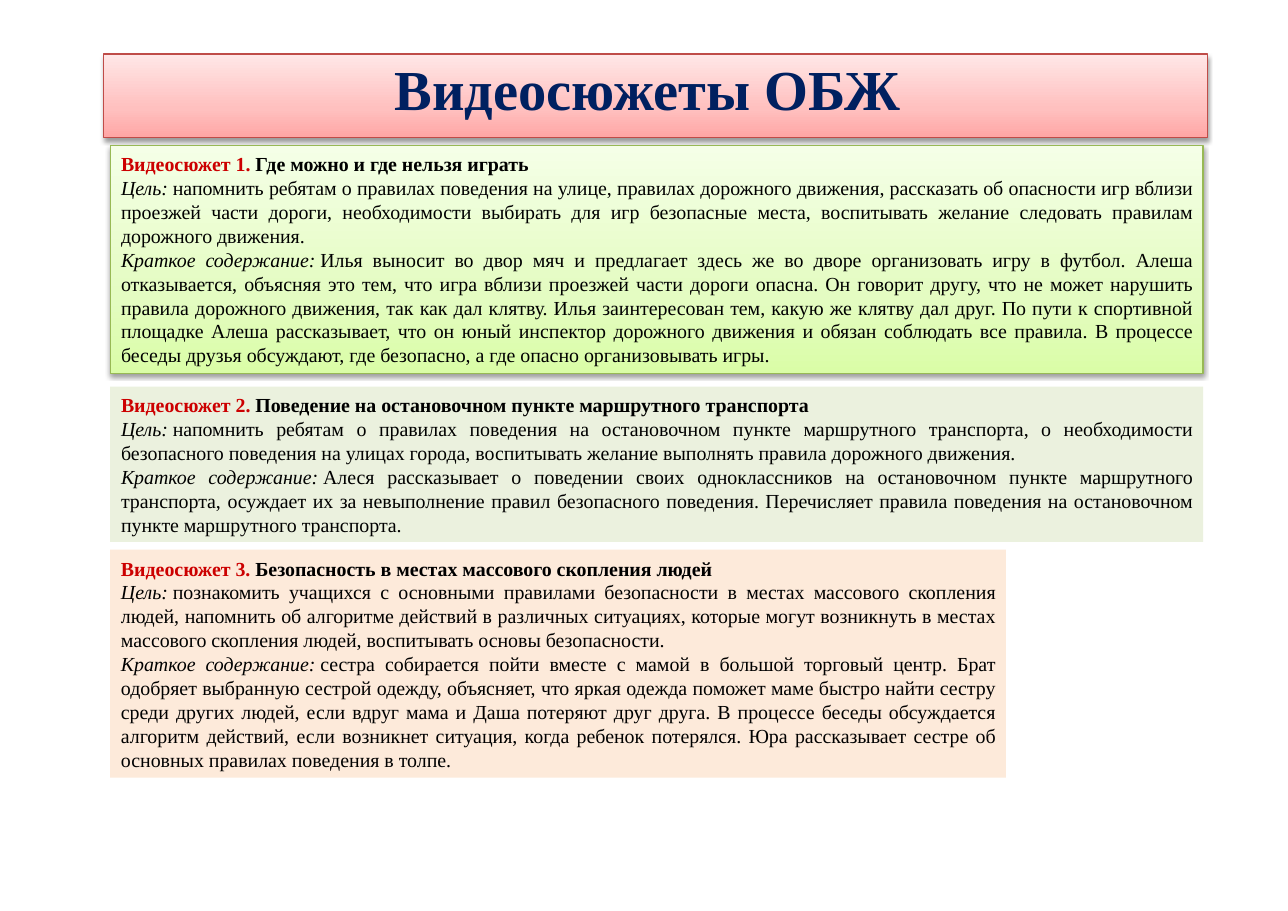
from copy import deepcopy

from lxml.etree import SubElement
from pptx import Presentation
from pptx.dml.color import RGBColor
from pptx.enum.shapes import MSO_SHAPE
from pptx.enum.text import MSO_ANCHOR, MSO_AUTO_SIZE, PP_ALIGN
from pptx.oxml.ns import qn
from pptx.util import Pt

FONT = "Times New Roman"
NBSP = chr(160)  # keeps its width in justified lines

BLACK = RGBColor(0x00, 0x00, 0x00)
NAVY = RGBColor(0x00, 0x20, 0x60)
RED = RGBColor(0xCC, 0x00, 0x00)
PINK_LINE = RGBColor(0xBF, 0x4C, 0x48)
GREEN_LINE = RGBColor(0x98, 0xB9, 0x55)
SAGE = RGBColor(0xEB, 0xF1, 0xDE)
PEACH = RGBColor(0xFD, 0xEA, 0xDA)
# Gradients run from bottom to top
PINKS = (RGBColor(0xFF, 0xA6, 0xA5), RGBColor(0xFF, 0xC0, 0xBF), RGBColor(0xFF, 0xE7, 0xE7))
GREENS = (RGBColor(0xDA, 0xFD, 0xA7), RGBColor(0xE4, 0xFC, 0xC2), RGBColor(0xF5, 0xFF, 0xE7))
STOPS = (0, 0.35, 1)

LEFT = 72
WIDE, NARROW = 714.2, 585.4

STORIES = [
    dict(
        title="Где можно и где нельзя играть",
        goal="напомнить ребятам о правилах поведения на улице, правилах дорожного движения, "
             "рассказать об опасности игр вблизи проезжей части дороги, необходимости выбирать "
             "для игр безопасные места, воспитывать желание следовать правилам дорожного движения.",
        summary="Илья выносит во двор мяч и предлагает здесь же во дворе организовать игру в футбол. "
                "Алеша отказывается, объясняя это тем, что игра вблизи проезжей части дороги опасна. "
                "Он говорит другу, что не может нарушить правила дорожного движения, так как дал клятву. "
                "Илья заинтересован тем, какую же клятву дал друг. По пути к спортивной площадке Алеша "
                "рассказывает, что он юный инспектор дорожного движения и обязан соблюдать все правила. "
                "В процессе беседы друзья обсуждают, где безопасно, а где опасно организовывать игры.",
    ),
    dict(
        title="Поведение на остановочном пункте маршрутного транспорта",
        goal="напомнить ребятам о правилах поведения на остановочном пункте маршрутного транспорта, "
             "о необходимости безопасного поведения на улицах города, воспитывать желание выполнять "
             "правила дорожного движения.",
        summary="Алеся рассказывает о поведении своих одноклассников на остановочном пункте маршрутного "
                "транспорта, осуждает их за невыполнение правил безопасного поведения. Перечисляет "
                "правила поведения на остановочном пункте маршрутного транспорта.",
    ),
    dict(
        title="Безопасность в местах массового скопления людей",
        goal="познакомить учащихся с основными правилами безопасности в местах массового скопления "
             "людей, напомнить об алгоритме действий в различных ситуациях, которые могут возникнуть "
             "в местах массового скопления людей, воспитывать основы безопасности.",
        summary="сестра собирается пойти вместе с мамой в большой торговый центр. Брат одобряет "
                "выбранную сестрой одежду, объясняет, что яркая одежда поможет маме быстро найти сестру "
                "среди других людей, если вдруг мама и Даша потеряют друг друга. В процессе беседы "
                "обсуждается алгоритм действий, если возникнет ситуация, когда ребенок потерялся. "
                "Юра рассказывает сестре об основных правилах поведения в толпе.",
    ),
]


def add_run(p, text, size=13, color=BLACK, bold=False, italic=False):
    r = p.add_run()
    r.text = text
    r.font.name, r.font.size = FONT, Pt(size)
    r.font.bold, r.font.italic = bold, italic
    r.font.color.rgb = color


def set_raised_style(sp, colors, line_color):
    """Three-stop gradient, thin outline and a soft shadow below."""
    sp.fill.gradient()
    sp.fill.gradient_angle = 90
    gs_lst = sp.element.spPr.find(".//" + qn("a:gsLst"))
    gs_lst.append(deepcopy(gs_lst[0]))
    for stop, position, color in zip(sp.fill.gradient_stops, STOPS, colors):
        stop.position = position
        stop.color.rgb = color
    sp.line.color.rgb = line_color
    sp.line.width = Pt(0.75)
    sp.shadow.inherit = False
    effects = sp.element.spPr.find(qn("a:effectLst"))
    shadow = SubElement(effects, qn("a:outerShdw"), blurRad=str(Pt(3.1)),
                        dist=str(Pt(1.6)), dir="5400000", rotWithShape="0")
    black = SubElement(shadow, qn("a:srgbClr"), val="000000")
    SubElement(black, qn("a:alpha"), val="38000")


def set_title(s, text):
    sp = s.shapes.title
    sp.left, sp.top, sp.width, sp.height = Pt(67.7), Pt(35.3), Pt(721.4), Pt(54.7)
    set_raised_style(sp, PINKS, PINK_LINE)
    tf = sp.text_frame
    tf.auto_size = MSO_AUTO_SIZE.NONE
    tf.vertical_anchor = MSO_ANCHOR.TOP
    tf.margin_left, tf.margin_right = Pt(8), Pt(18)
    tf.margin_top = tf.margin_bottom = Pt(0)
    p = tf.paragraphs[0]
    p.alignment = PP_ALIGN.CENTER
    add_run(p, text, size=36.9, color=NAVY, bold=True)


def add_panel(s, top, width, height):
    sp = s.shapes.add_shape(MSO_SHAPE.RECTANGLE, Pt(LEFT), Pt(top), Pt(width), Pt(height))
    sp.shadow.inherit = False
    sp.line.fill.background()
    return sp


def fill_story(sp, number, title, goal, summary):
    tf = sp.text_frame
    tf.word_wrap = True
    tf.vertical_anchor = MSO_ANCHOR.MIDDLE
    p = tf.paragraphs[0]
    add_run(p, f"Видеосюжет {number}.{NBSP}", color=RED, bold=True)
    add_run(p, title, bold=True)
    for label, text in (("Цель:", goal), ("Краткое содержание:", summary)):
        p = tf.add_paragraph()
        add_run(p, label + NBSP, italic=True)
        add_run(p, text)
    for p in tf.paragraphs:
        p.alignment = PP_ALIGN.JUSTIFY


def main():
    prs = Presentation()
    prs.slide_width, prs.slide_height = Pt(841.68), Pt(595.44)
    s = prs.slides.add_slide(prs.slide_layouts[5])

    # Heading
    set_title(s, "Видеосюжеты ОБЖ")

    # Panels, one per story
    green = add_panel(s, 95, WIDE, 149)
    set_raised_style(green, GREENS, GREEN_LINE)
    sage = add_panel(s, 252.7, WIDE, 101.5)
    peach = add_panel(s, 359.3, NARROW, 149)
    for sp, color in ((sage, SAGE), (peach, PEACH)):
        sp.fill.solid()
        sp.fill.fore_color.rgb = color

    # Story texts
    for number, (sp, story) in enumerate(zip((green, sage, peach), STORIES), 1):
        fill_story(sp, number, **story)

    prs.save("out.pptx")


if __name__ == "__main__":
    main()
